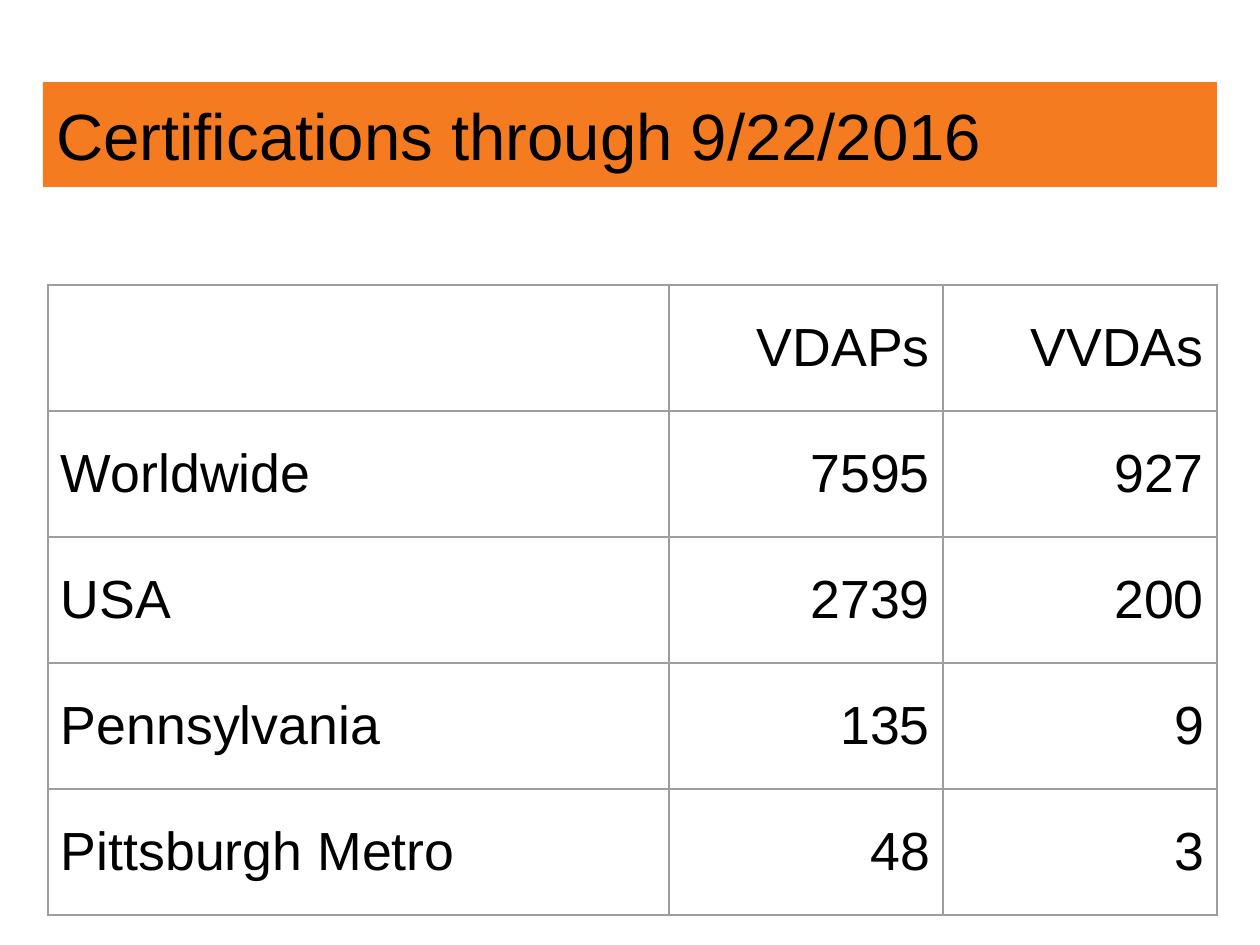
"""Build the certification counts slide."""
from lxml.etree import SubElement
from pptx import Presentation
from pptx.dml.color import RGBColor
from pptx.enum.text import MSO_ANCHOR, MSO_AUTO_SIZE, PP_ALIGN
from pptx.oxml.ns import qn
from pptx.util import Pt

PX = 914400 // 168
INSET = 13 * PX
COLORS = {"banner": "F47B20", "text": "000000", "grid": "9E9E9E"}
COUNTS = [
    ("", "VDAPs", "VVDAs"),
    ("Worldwide", "7595", "927"),
    ("USA", "2739", "200"),
    ("Pennsylvania", "135", "9"),
    ("Pittsburgh Metro", "48", "3"),
]
COLUMN_WIDTHS = [621, 274, 274]
ROW_HEIGHT = 126


def write(paragraph, text, size, align):
    paragraph.alignment = align
    run = paragraph.add_run()
    run.text = text
    run.font.name = "Arial"
    run.font.size = Pt(size)
    run.font.color.rgb = RGBColor.from_string(COLORS["text"])


def add_border(cell, side):
    line = SubElement(cell._tc.get_or_add_tcPr(), qn(f"a:{side}"), w=str(Pt(0.75)))
    fill = SubElement(line, qn("a:solidFill"))
    SubElement(fill, qn("a:srgbClr"), val=COLORS["grid"])


prs = Presentation()
prs.slide_width = 1260 * PX
prs.slide_height = 945 * PX
slide = prs.slides.add_slide(prs.slide_layouts[5])

banner = slide.shapes.title
banner.left, banner.top, banner.width, banner.height = (
    43 * PX, 82 * PX, 1174 * PX, 105 * PX)
banner.fill.solid()
banner.fill.fore_color.rgb = RGBColor.from_string(COLORS["banner"])
heading = banner.text_frame
heading.margin_left = heading.margin_right = INSET
heading.margin_top = heading.margin_bottom = INSET
heading.vertical_anchor = MSO_ANCHOR.BOTTOM
heading.auto_size = MSO_AUTO_SIZE.NONE
heading.word_wrap = True
write(heading.paragraphs[0], "Certifications through 9/22/2016", 28, PP_ALIGN.LEFT)

counts_table = slide.shapes.add_table(
    len(COUNTS), len(COLUMN_WIDTHS), 48 * PX, 285 * PX,
    sum(COLUMN_WIDTHS) * PX, len(COUNTS) * ROW_HEIGHT * PX).table
counts_table.first_row = False
counts_table.horz_banding = False
for column, width in zip(counts_table.columns, COLUMN_WIDTHS):
    column.width = width * PX
for row, values in zip(counts_table.rows, COUNTS):
    row.height = ROW_HEIGHT * PX
    for index, (cell, value) in enumerate(zip(row.cells, values)):
        cell.margin_left = cell.margin_right = INSET
        cell.margin_top = cell.margin_bottom = INSET
        cell.vertical_anchor = MSO_ANCHOR.MIDDLE
        for side in ("lnL", "lnR", "lnT", "lnB"):
            add_border(cell, side)
        cell.fill.background()
        if value:
            align = PP_ALIGN.RIGHT if index else PP_ALIGN.LEFT
            write(cell.text_frame.paragraphs[0], value, 23, align)

prs.save("out.pptx")
